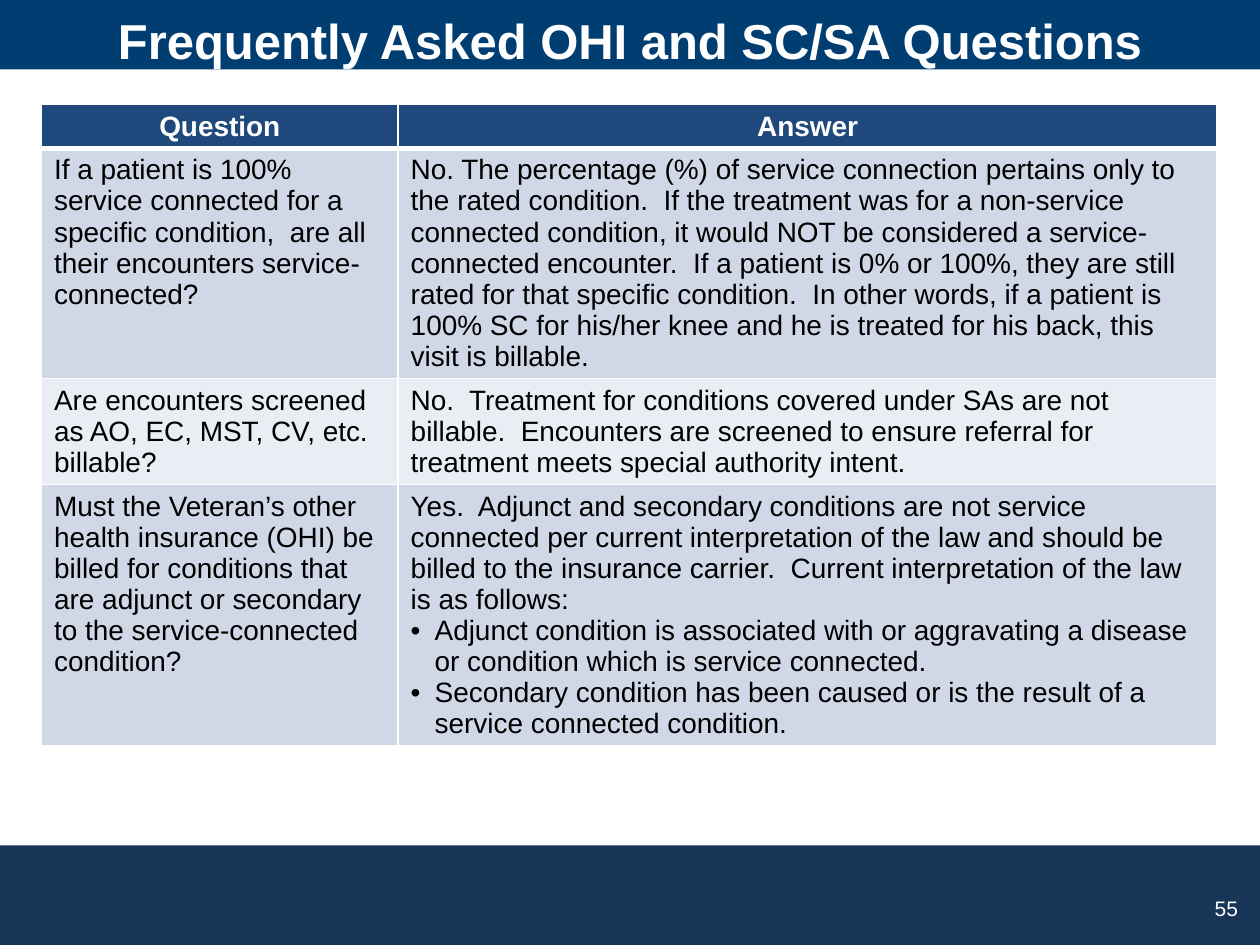
from lxml import etree
from pptx import Presentation
from pptx.dml.color import RGBColor
from pptx.enum.shapes import MSO_SHAPE
from pptx.enum.text import MSO_ANCHOR, MSO_AUTO_SIZE, PP_ALIGN
from pptx.oxml.ns import qn
from pptx.util import Inches, Pt

RECTANGLE = MSO_SHAPE.RECTANGLE
TOP = MSO_ANCHOR.TOP
NO_AUTOFIT = MSO_AUTO_SIZE.NONE
LEFT, CENTER = PP_ALIGN.LEFT, PP_ALIGN.CENTER

SLIDE_W, SLIDE_H = 10, 7.5
WHITE, BLACK = "FFFFFF", "000000"
HEADER_FILL = "1F497D"
ROW_FILLS = ["D0D8E8", "E9EDF4"]
# top, height, colour
BANDS = [(6.71, 0.79, "173557"), (0, 0.55, "003E71")]

TITLE = "Frequently Asked OHI and SC/SA Questions"
PAGE_NUMBER = "55"
HEADINGS = ["Question", "Answer"]
# question, answer, bullets below the answer
FAQS = [
    ("If a patient is 100% service connected for a specific condition,  are all "
     "their encounters service-connected?",
     "No. The percentage (%) of service connection pertains only to the rated "
     "condition.  If the treatment was for a non-service connected condition, it "
     "would NOT be considered a service-connected encounter.  If a patient is 0% or "
     "100%, they are still rated for that specific condition.  In other words, if a "
     "patient is 100% SC for his/her knee and he is treated for his back, this visit "
     "is billable.", []),
    ("Are encounters screened as AO, EC, MST, CV, etc. billable?",
     "No.  Treatment for conditions covered under SAs are not billable.  Encounters "
     "are screened to ensure referral for treatment meets special authority intent.",
     []),
    ("Must the Veteran’s other health insurance (OHI) be billed for conditions that "
     "are adjunct or secondary to the service-connected condition?",
     "Yes.  Adjunct and secondary conditions are not service connected per current "
     "interpretation of the law and should be billed to the insurance carrier.  "
     "Current interpretation of the law is as follows:",
     ["Adjunct condition is associated with or aggravating a disease or condition "
      "which is service connected.",
      "Secondary condition has been caused or is the result of a service connected "
      "condition."]),
]
TABLE_LEFT, TABLE_TOP = 0.33, 0.83
COLUMN_WIDTHS = [2.83, 6.5]
ROW_HEIGHTS = [0.33, 0.33, 0.33, 0.33]  # rows grow to fit their text
BULLET_INDENT = 0.19


def rgb(value):
    return RGBColor.from_string(value)


def write(paragraph, text, size, color, bold=False, align=LEFT):
    paragraph.alignment = align
    run = paragraph.add_run()
    run.text = text
    run.font.color.rgb = rgb(color)
    font_format = {"name": "Arial", "size": Pt(size), "bold": bold}
    for attribute, value in font_format.items():
        setattr(run.font, attribute, value)


def add_bullet(paragraph):
    properties = paragraph._p.get_or_add_pPr()
    properties.set("marL", str(Inches(BULLET_INDENT)))
    properties.set("indent", str(-Inches(BULLET_INDENT)))
    etree.SubElement(properties, qn("a:buFont")).set("typeface", "Arial")
    etree.SubElement(properties, qn("a:buChar")).set("char", "•")


def style_cell(cell, fill, bottom_width=1, top_width=1):
    """Give the cell its fill and white borders."""
    properties = cell._tc.get_or_add_tcPr()
    widths = {"lnL": 1, "lnR": 1, "lnT": top_width, "lnB": bottom_width}
    for side, width in widths.items():
        border = etree.SubElement(properties, qn(f"a:{side}"), w=str(Pt(width)))
        solid = etree.SubElement(border, qn("a:solidFill"))
        etree.SubElement(solid, qn("a:srgbClr"), val=WHITE)
    cell.fill.solid()
    cell.fill.fore_color.rgb = rgb(fill)


def set_frame(frame, top_inset=0):
    frame_format = {"margin_left": 0, "margin_right": 0, "margin_bottom": 0,
                    "margin_top": Inches(top_inset), "word_wrap": True,
                    "vertical_anchor": TOP, "auto_size": NO_AUTOFIT}
    for attribute, value in frame_format.items():
        setattr(frame, attribute, value)


def add_bands(slide):
    for top, height, color in BANDS:
        band = slide.shapes.add_shape(RECTANGLE, 0, Inches(top),
                                      Inches(SLIDE_W), Inches(height))
        band.shadow.inherit = False
        band.fill.solid()
        band.fill.fore_color.rgb = rgb(color)
        band.line.fill.background()


def add_title(slide):
    title = slide.shapes.title
    slide.shapes._spTree.append(title._element)  # in front of the bands
    title.left, title.top = 0, Inches(0.04)
    title.width, title.height = Inches(SLIDE_W), Inches(0.42)
    set_frame(title.text_frame, top_inset=0.04)
    write(title.text_frame.paragraphs[0], TITLE, 28, WHITE, True, CENTER)


def add_faq_table(slide):
    table = slide.shapes.add_table(
        len(FAQS) + 1, len(HEADINGS), Inches(TABLE_LEFT), Inches(TABLE_TOP),
        Inches(sum(COLUMN_WIDTHS)), Inches(sum(ROW_HEIGHTS))).table
    for column, width in zip(table.columns, COLUMN_WIDTHS):
        column.width = Inches(width)
    for row, height in zip(table.rows, ROW_HEIGHTS):
        row.height = Inches(height)

    for column, heading in enumerate(HEADINGS):
        cell = table.cell(0, column)
        style_cell(cell, HEADER_FILL, bottom_width=3)
        write(cell.text_frame.paragraphs[0], heading, 16, WHITE, True, CENTER)

    for row, (question, answer, bullets) in enumerate(FAQS, start=1):
        fill = ROW_FILLS[(row - 1) % len(ROW_FILLS)]
        for column, text in enumerate((question, answer)):
            cell = table.cell(row, column)
            style_cell(cell, fill, top_width=3 if row == 1 else 1)
            write(cell.text_frame.paragraphs[0], text, 16, BLACK)
        for bullet in bullets:
            paragraph = cell.text_frame.add_paragraph()
            add_bullet(paragraph)
            write(paragraph, bullet, 16, BLACK)


def add_page_number(slide):
    box = slide.shapes.add_textbox(Inches(9.61), Inches(7.11),
                                   Inches(0.32), Inches(0.3))
    set_frame(box.text_frame)
    box.text_frame.margin_left = Inches(0.03)
    write(box.text_frame.paragraphs[0], PAGE_NUMBER, 12, WHITE)


def main():
    deck = Presentation()
    deck.slide_width, deck.slide_height = Inches(SLIDE_W), Inches(SLIDE_H)
    slide = deck.slides.add_slide(deck.slide_layouts[5])
    add_bands(slide)
    add_title(slide)
    add_faq_table(slide)
    add_page_number(slide)
    deck.save("out.pptx")


if __name__ == "__main__":
    main()
